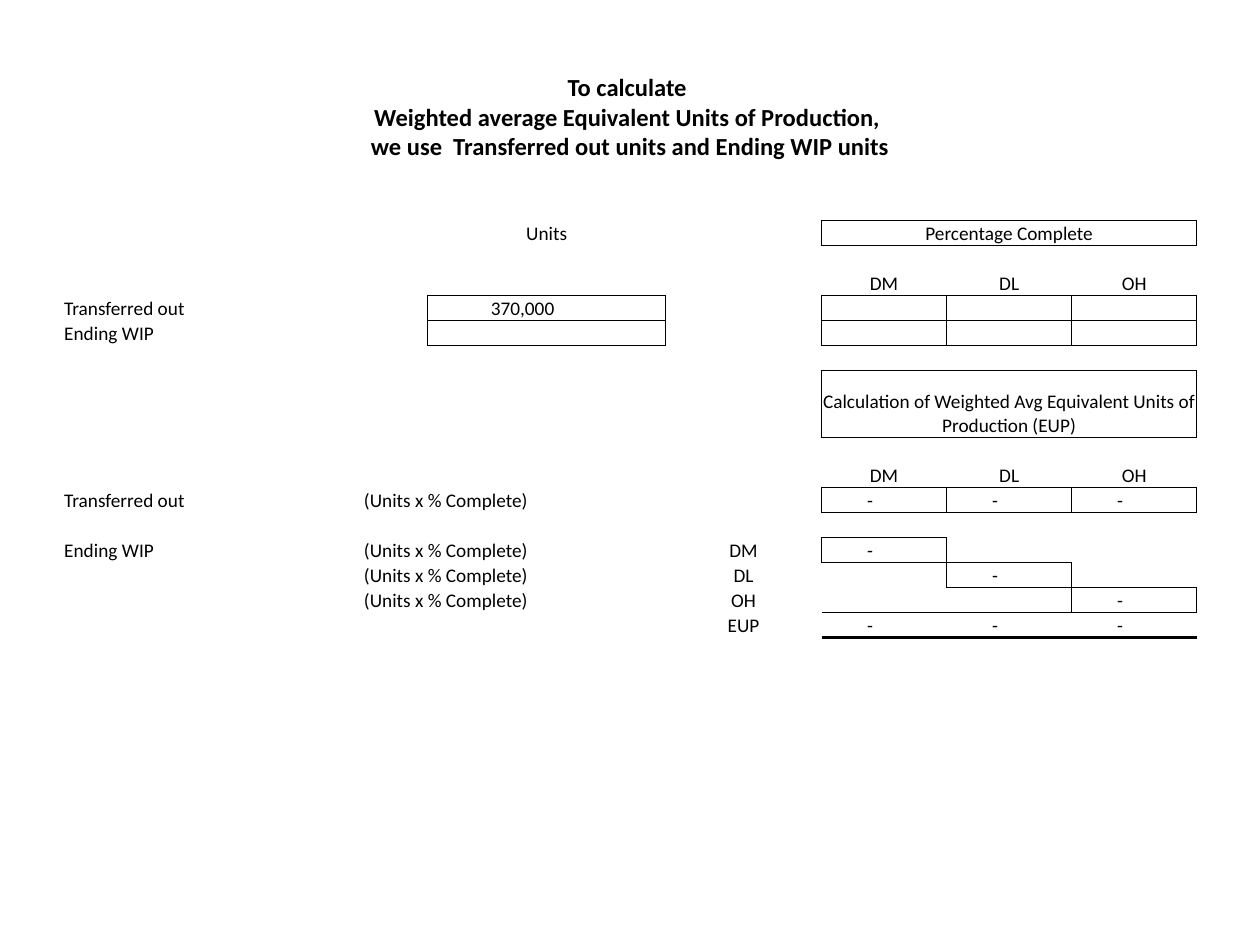
from collections import defaultdict
from dataclasses import dataclass

from lxml import etree
from pptx import Presentation
from pptx.dml.color import RGBColor
from pptx.enum.text import MSO_ANCHOR, MSO_AUTO_SIZE, PP_ALIGN
from pptx.oxml.ns import qn
from pptx.util import Pt

LEFT, CENTER = PP_ALIGN.LEFT, PP_ALIGN.CENTER
BOTTOM, MIDDLE = MSO_ANCHOR.BOTTOM, MSO_ANCHOR.MIDDLE
NO_FIT = MSO_AUTO_SIZE.NONE

COLORS = {"ink": "000000"}
TITLE_FONT = {"name": "Calibri", "size": Pt(14), "bold": True}
BODY_FONT = {"name": "Calibri", "size": Pt(11), "bold": False}
TITLE_BOX = {"left": Pt(36), "top": Pt(21.6), "width": Pt(648), "height": Pt(90)}
TITLE_FRAME = {"vertical_anchor": MIDDLE, "auto_size": NO_FIT, "word_wrap": True}
TABLE_FLAGS = {"first_row": False, "horz_banding": False}
CELL_FORMAT = {
    "margin_left": Pt(0.7),
    "margin_right": Pt(0.7),
    "margin_top": Pt(0.7),
    "margin_bottom": Pt(0),
    "vertical_anchor": BOTTOM,
}
PLAIN_TABLE_STYLE = "{2D5ABB26-0587-4C30-8999-92F81FD0307C}"

TITLE = (
    "To calculate \vWeighted average Equivalent Units of Production, "
    "\vwe use  Transferred out units and Ending WIP units"
)
COLUMN_WIDTHS = [171.3, 37.2, 135.8, 89.2, 71.5, 71.5, 71.5]
HEADING_ROW = 6
ROW_HEIGHTS = [38.3 if row == HEADING_ROW else 14 for row in range(15)]
COST_COLUMNS = (4, 5, 6)
COSTS = ("DM", "DL", "OH")
FORMULA = "(Units x % Complete)"
THIN, THICK = 0.5, 2
SIDES = "LRTB"


@dataclass(frozen=True)
class Entry:
    row: int
    col: int
    text: str
    align: int = LEFT
    indent: float = 0.7
    span: int = 1
    anchor: int = BOTTOM


@dataclass(frozen=True)
class Edge:
    row: int
    col: int
    sides: str = SIDES
    weight: float = THIN
    span: int = 1


def dash(row: int, col: int) -> Entry:
    return Entry(row, col, "-", indent=26)


ENTRIES = [
    Entry(0, 2, "Units", CENTER),
    Entry(0, 4, "Percentage Complete", CENTER, span=3, anchor=MIDDLE),
    Entry(3, 2, "370,000", indent=36),
    Entry(HEADING_ROW, 4,
          "Calculation of Weighted Avg Equivalent Units of Production (EUP)",
          CENTER, span=3),
    Entry(9, 1, FORMULA, span=3),
    Entry(14, 3, "EUP", CENTER),
]
ENTRIES += [Entry(row, 0, "Transferred out") for row in (3, 9)]
ENTRIES += [Entry(row, 0, "Ending WIP") for row in (4, 11)]
EDGES = [Edge(row, 4, span=3) for row in (0, HEADING_ROW)]
EDGES += [Edge(row, 2) for row in (3, 4)]
EDGES += [Edge(13, col, "B") for col in COST_COLUMNS[:2]]

for step, (cost, column) in enumerate(zip(COSTS, COST_COLUMNS)):
    wip_row = 11 + step
    ENTRIES += [Entry(row, column, cost, CENTER) for row in (2, 8)]
    ENTRIES += [Entry(wip_row, 1, FORMULA, span=2), Entry(wip_row, 3, cost, CENTER)]
    ENTRIES += [dash(row, column) for row in (9, wip_row, 14)]
    EDGES += [Edge(row, column) for row in (3, 4, 9, wip_row)]
    EDGES += [Edge(14, column, "T"), Edge(14, column, "B", THICK)]


def apply(target, values: dict) -> None:
    for name, value in values.items():
        setattr(target, name, value)


def style_font(font, values: dict) -> None:
    apply(font, values)
    font.color.rgb = RGBColor.from_string(COLORS["ink"])


def add_title(slide) -> None:
    title = slide.shapes.title
    apply(title, TITLE_BOX)
    frame = title.text_frame
    apply(frame, TITLE_FRAME)
    frame.text = TITLE
    paragraph = frame.paragraphs[0]
    paragraph.alignment = CENTER
    for run in paragraph.runs:
        style_font(run.font, TITLE_FONT)


def collect_borders(edges: list[Edge]) -> dict:
    borders = defaultdict(dict)
    for edge in edges:
        last = edge.col + edge.span - 1
        for col in range(edge.col, last + 1):
            for side in edge.sides:
                inner = (side == "L" and col > edge.col) or (side == "R" and col < last)
                if inner and col != edge.col:
                    continue
                borders[edge.row, col][side] = edge.weight
    return borders


def draw_borders(cell, weights: dict) -> None:
    properties = cell._tc.get_or_add_tcPr()
    for side in SIDES:
        if side in weights:
            line = etree.SubElement(properties, qn(f"a:ln{side}"), w=str(Pt(weights[side])))
            fill = etree.SubElement(line, qn("a:solidFill"))
            etree.SubElement(fill, qn("a:srgbClr"), val=COLORS["ink"])


def write_entry(table, entry: Entry) -> None:
    cell = table.cell(entry.row, entry.col)
    if entry.span > 1:
        cell.merge(table.cell(entry.row, entry.col + entry.span - 1))
    cell.margin_left = Pt(entry.indent)
    cell.vertical_anchor = entry.anchor
    paragraph = cell.text_frame.paragraphs[0]
    paragraph.alignment = entry.align
    run = paragraph.add_run()
    run.text = entry.text
    style_font(run.font, BODY_FONT)


def add_units_table(slide) -> None:
    frame = slide.shapes.add_table(
        len(ROW_HEIGHTS), len(COLUMN_WIDTHS),
        Pt(36), Pt(126), Pt(sum(COLUMN_WIDTHS)), Pt(sum(ROW_HEIGHTS)),
    )
    table = frame.table
    apply(table, TABLE_FLAGS)
    table._tbl.tblPr.find(qn("a:tableStyleId")).text = PLAIN_TABLE_STYLE
    for column, width in zip(table.columns, COLUMN_WIDTHS):
        column.width = Pt(width)
    borders = collect_borders(EDGES)
    for row_index, (row, height) in enumerate(zip(table.rows, ROW_HEIGHTS)):
        row.height = Pt(height)
        for col_index, cell in enumerate(row.cells):
            apply(cell, CELL_FORMAT)
            draw_borders(cell, borders.get((row_index, col_index), {}))
            cell.fill.background()
            end_mark = etree.SubElement(cell.text_frame.paragraphs[0]._p, qn("a:endParaRPr"))
            end_mark.set("sz", "1100")
    for entry in ENTRIES:
        write_entry(table, entry)


def main() -> None:
    deck = Presentation()
    deck.slide_width, deck.slide_height = Pt(720), Pt(540)
    slide = deck.slides.add_slide(deck.slide_layouts[5])
    add_title(slide)
    add_units_table(slide)
    deck.save("out.pptx")


if __name__ == "__main__":
    main()
